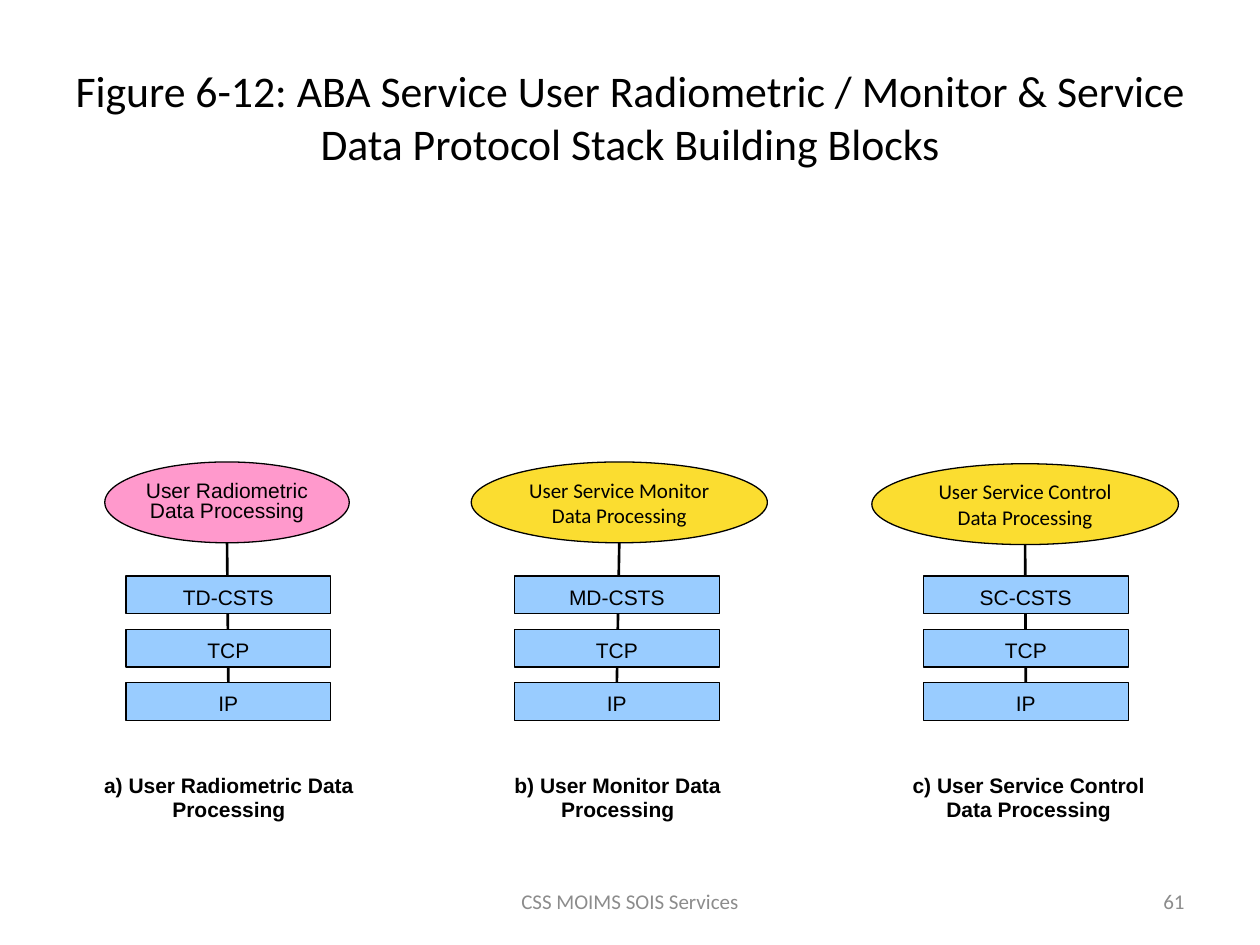
from lxml.etree import SubElement
from pptx import Presentation
from pptx.dml.color import RGBColor
from pptx.enum.shapes import MSO_CONNECTOR as Connector, MSO_SHAPE as Shape
from pptx.enum.text import MSO_ANCHOR as Anchor, PP_ALIGN as Align
from pptx.oxml.ns import qn
from pptx.util import Pt

TITLE = ("Figure 6-12: ABA Service User Radiometric / Monitor & "
         "Service Data Protocol Stack Building Blocks")
FOOTER = "CSS MOIMS SOIS Services"
PAGE_NUMBER = "61"

STACKS = [
    {"process": ["User Radiometric", "Data Processing"],
     "oval": (59.9, 264, 139.7), "fill": "pink", "font": "Arial", "spacing": 0.8,
     "protocols": ["TD-CSTS", "TCP", "IP"], "left": 72,
     "caption": "a) User Radiometric Data Processing", "caption_span": (41.8, 178)},
    {"process": ["User Service Monitor Data Processing"],
     "oval": (269.3, 264, 169.2), "fill": "yellow", "font": "Calibri", "spacing": None,
     "protocols": ["MD-CSTS", "TCP", "IP"], "left": 294,
     "caption": "b) User Monitor Data Processing", "caption_span": (264, 178)},
    {"process": ["User Service Control Data Processing"],
     "oval": (498.2, 265, 175.2), "fill": "yellow", "font": "Calibri", "spacing": None,
     "protocols": ["SC-CSTS", "TCP", "IP"], "left": 527.7,
     "caption": "c) User Service Control Data Processing", "caption_span": (509.8, 156)},
]

THEME = {
    "pink": RGBColor.from_string("FF99CC"),
    "yellow": RGBColor.from_string("FBDD30"),
    "blue": RGBColor.from_string("99CCFF"),
    "ink": RGBColor.from_string("000000"),
    "muted": RGBColor.from_string("8C8C8C"),
    "title_size": 25,
    "body_size": 12,
    "outline": 0.75,
    "link": 1.5,
}

OVAL_HEIGHT = 46.2
BOX_WIDTH, BOX_HEIGHT = 117, 21.6
BOX_TOP, BOX_PITCH = 329.2, 30.4
CAPTION_TOP, CAPTION_HEIGHT = 437.8, 36
FOOTER_TOP, FOOTER_HEIGHT = 500.5, 28.8


def write(holder, lines, font="Arial", size="body_size", color="ink", bold=False,
          align=Align.CENTER, spacing=None, insets=(7.2, 3.6, 7.2, 3.6)):
    frame = holder.text_frame
    frame.word_wrap = True
    frame.vertical_anchor = Anchor.MIDDLE
    (frame.margin_left, frame.margin_top,
     frame.margin_right, frame.margin_bottom) = map(Pt, insets)
    for index, line in enumerate(lines):
        paragraph = frame.add_paragraph() if index else frame.paragraphs[0]
        paragraph.alignment = align
        paragraph.line_spacing = spacing
        run = paragraph.add_run()
        run.text = line
        run.font.name = font
        run.font.size = Pt(THEME[size])
        run.font.bold = bold
        run.font.color.rgb = THEME[color]


def add_label(slide, text, bounds, **style):
    write(slide.shapes.add_textbox(*map(Pt, bounds)), [text], **style)


def add_block(slide, kind, bounds, fill, lines, **style):
    block = slide.shapes.add_shape(kind, *map(Pt, bounds))
    block.shadow.inherit = False
    block.fill.solid()
    block.fill.fore_color.rgb = THEME[fill]
    block.line.color.rgb = THEME["ink"]
    block.line.width = Pt(THEME["outline"])
    write(block, lines, **style)
    return block


def add_link(slide, x, top, bottom):
    link = slide.shapes.add_connector(
        Connector.STRAIGHT, Pt(x), Pt(top), Pt(x), Pt(bottom))
    link.line.color.rgb = THEME["ink"]
    link.line.width = Pt(THEME["link"])
    SubElement(link._element.spPr, qn("a:effectLst"))
    return link


def add_stack(slide, stack):
    left, top, width = stack["oval"]
    add_block(slide, Shape.OVAL, (left, top, width, OVAL_HEIGHT), stack["fill"],
              stack["process"], font=stack["font"], spacing=stack["spacing"],
              insets=(0, 0, 0, 0))
    last_top = BOX_TOP + BOX_PITCH * (len(stack["protocols"]) - 1)
    link = add_link(slide, left + width / 2, top + OVAL_HEIGHT, last_top)
    for level, protocol in enumerate(stack["protocols"]):
        bounds = (stack["left"], BOX_TOP + BOX_PITCH * level, BOX_WIDTH, BOX_HEIGHT)
        box = add_block(slide, Shape.RECTANGLE, bounds, "blue", [protocol],
                        insets=(2.9, 2.2, 2.9, 0))
    link.end_connect(box, 0)
    caption_left, caption_width = stack["caption_span"]
    add_label(slide, stack["caption"],
              (caption_left, CAPTION_TOP, caption_width, CAPTION_HEIGHT),
              bold=True, spacing=Pt(14))


def main():
    deck = Presentation()
    deck.slide_width, deck.slide_height = Pt(720), Pt(540)
    slide = deck.slides.add_slide(deck.slide_layouts[6])
    add_label(slide, TITLE, (36, 21.6, 648, 90), font="Calibri", size="title_size")
    for stack in STACKS:
        add_stack(slide, stack)
    add_label(slide, FOOTER, (246, FOOTER_TOP, 228, FOOTER_HEIGHT),
              font="Calibri", color="muted")
    add_label(slide, PAGE_NUMBER, (516, FOOTER_TOP, 168, FOOTER_HEIGHT),
              font="Calibri", color="muted", align=Align.RIGHT)
    deck.save("out.pptx")


if __name__ == "__main__":
    main()
